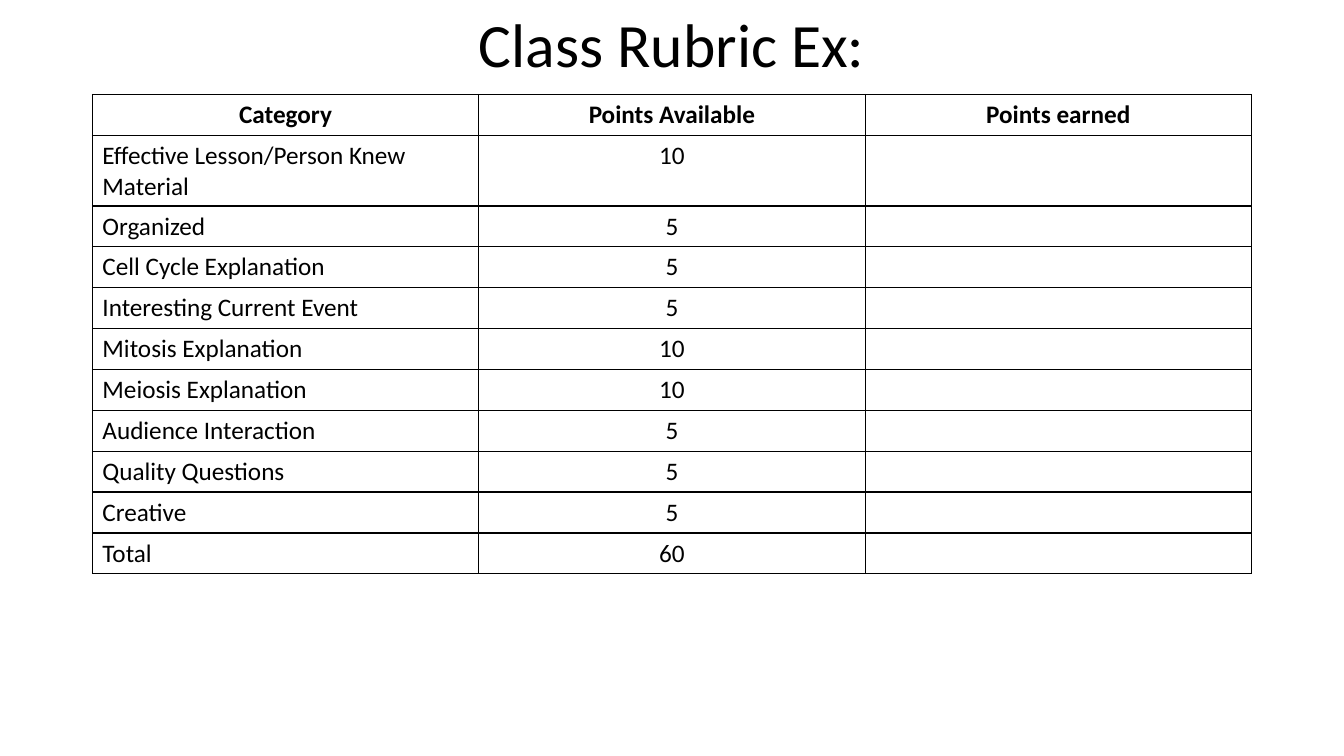
from lxml import etree
from pptx import Presentation
from pptx.dml.color import RGBColor
from pptx.enum import text
from pptx.oxml import ns
from pptx.util import Pt

BLACK = RGBColor(0, 0, 0)
FONT = "Calibri"
LEFT, WIDTH = Pt(66), Pt(828)
TITLE_HEIGHT = Pt(67.5)
ROW_HEIGHT = Pt(29.2)

HEADINGS = ("Category", "Points Available", "Points earned")
CRITERIA = [
    ("Effective Lesson/Person Knew Material", 10),
    ("Organized", 5),
    ("Cell Cycle Explanation", 5),
    ("Interesting Current Event", 5),
    ("Mitosis Explanation", 10),
    ("Meiosis Explanation", 10),
    ("Audience Interaction", 5),
    ("Quality Questions", 5),
    ("Creative", 5),
    ("Total", 60),
]


def write(frame, words, size, bold=False, centred=True):
    """Put one formatted paragraph in a text frame."""
    frame.text = words
    para = frame.paragraphs[0]
    para.alignment = text.PP_ALIGN.CENTER if centred else text.PP_ALIGN.LEFT
    for span in para.runs:
        span.font.name = FONT
        span.font.size = Pt(size)
        span.font.bold = bold
        span.font.color.rgb = BLACK
    return para


def add_title(page, words):
    box = page.shapes.add_textbox(LEFT, 0, WIDTH, TITLE_HEIGHT)
    frame = box.text_frame
    frame.word_wrap = True
    frame.vertical_anchor = text.MSO_ANCHOR.MIDDLE
    write(frame, words, 44).line_spacing = 0.9


def draw_borders(cell):
    """Outline a cell; border elements come before the fill."""
    properties = cell._tc.get_or_add_tcPr()
    for position, side in enumerate(("lnL", "lnR", "lnT", "lnB")):
        line = etree.Element(ns.qn(f"a:{side}"), w=str(Pt(1)))
        fill = etree.SubElement(line, ns.qn("a:solidFill"))
        etree.SubElement(fill, ns.qn("a:srgbClr"), val=str(BLACK))
        properties.insert(position, line)


def add_rubric(page, rows):
    frame = page.shapes.add_table(len(rows), len(HEADINGS), LEFT, TITLE_HEIGHT,
                                  WIDTH, ROW_HEIGHT * len(rows))
    table = frame.table
    table.horz_banding = False
    for row in table.rows:
        row.height = ROW_HEIGHT
    for r, values in enumerate(rows):
        for c, value in enumerate(values):
            cell = table.cell(r, c)
            cell.fill.background()
            write(cell.text_frame, str(value), 18, bold=r == 0,
                  centred=r == 0 or c > 0)
            draw_borders(cell)


def main():
    deck = Presentation()
    deck.slide_width, deck.slide_height = Pt(960), Pt(540)
    page = deck.slides.add_slide(deck.slide_layouts[6])

    # Title
    add_title(page, "Class Rubric Ex:")

    # Rubric, with the earned points left open
    add_rubric(page, [HEADINGS] + [(name, points, "") for name, points in CRITERIA])

    deck.save("out.pptx")


if __name__ == "__main__":
    main()
